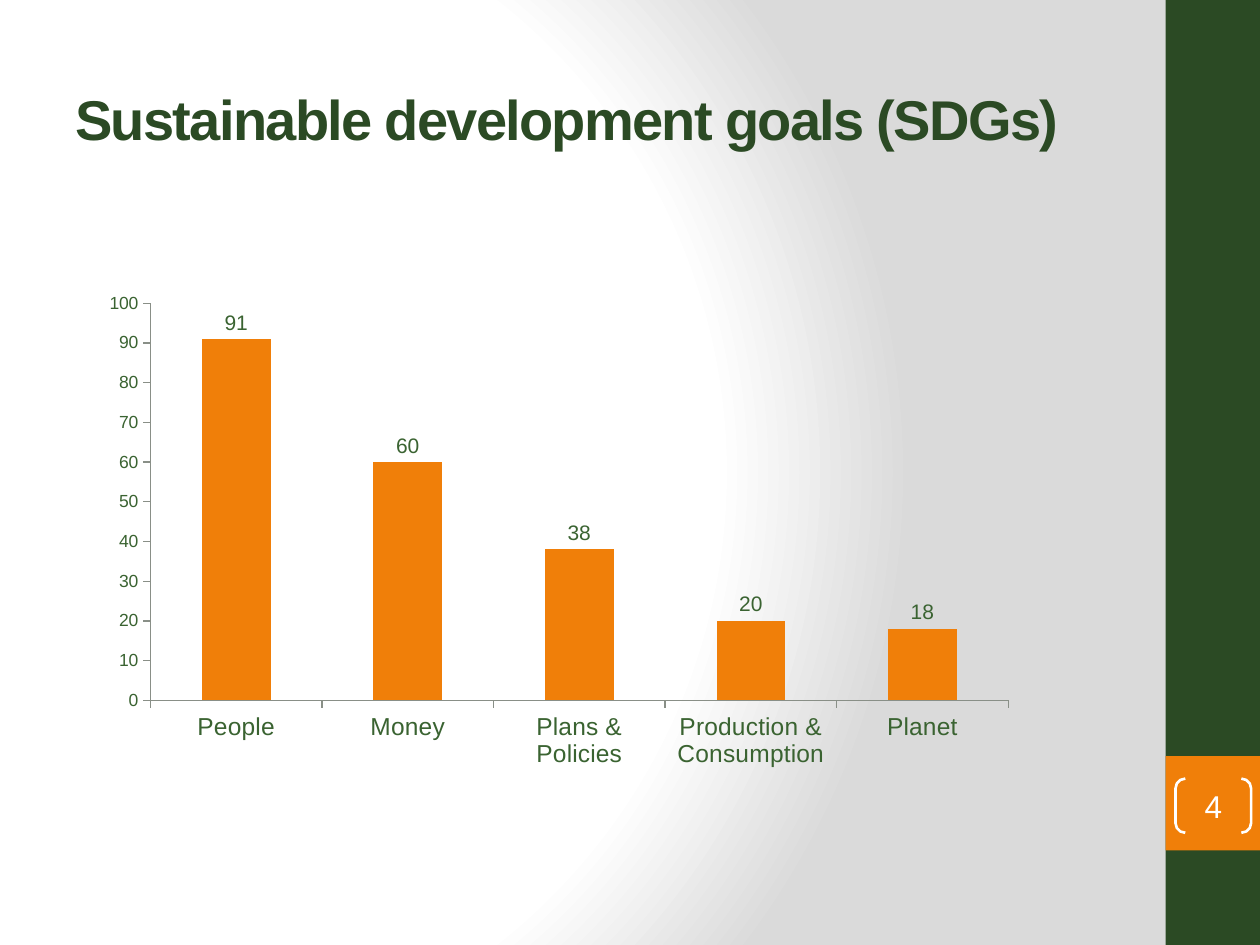
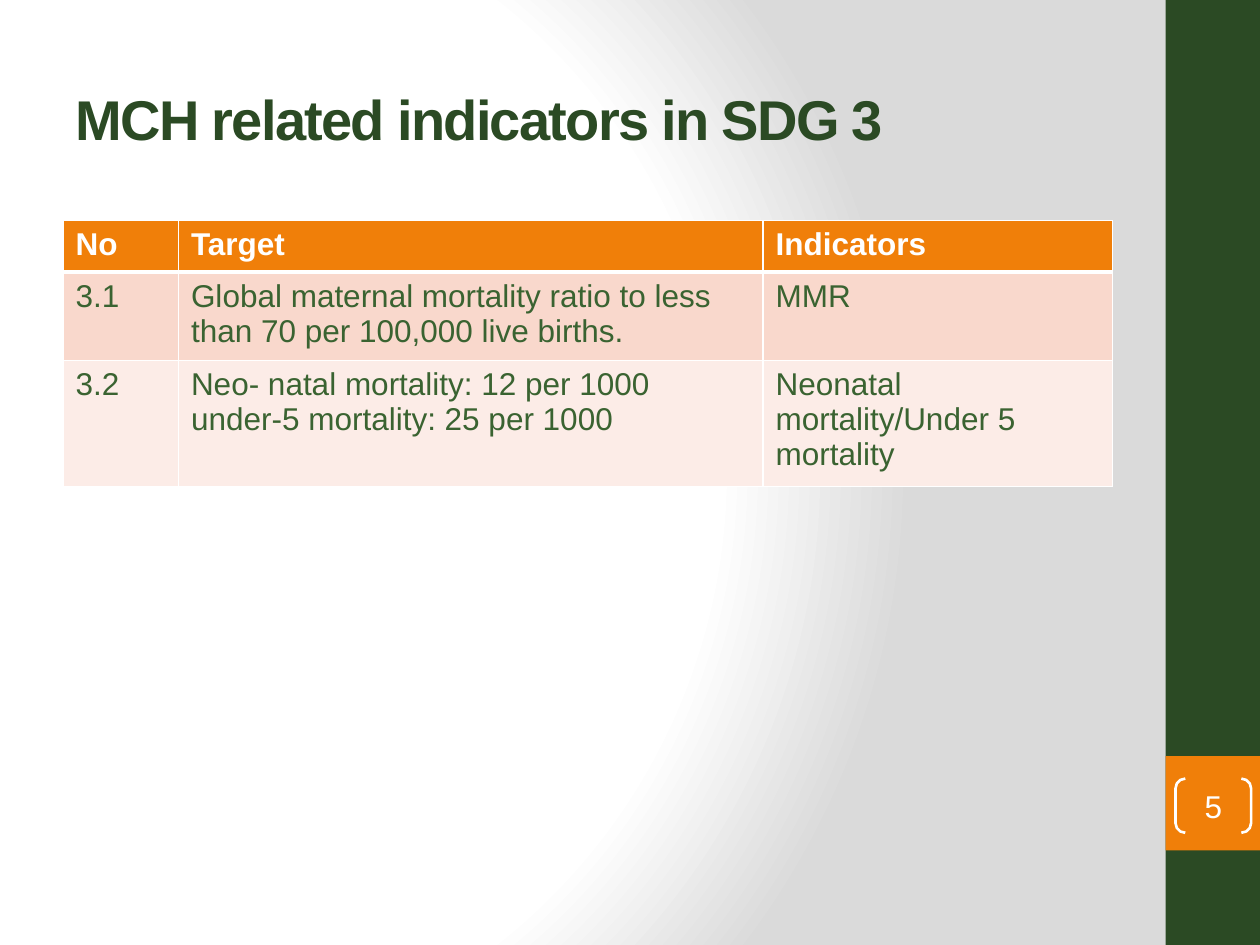
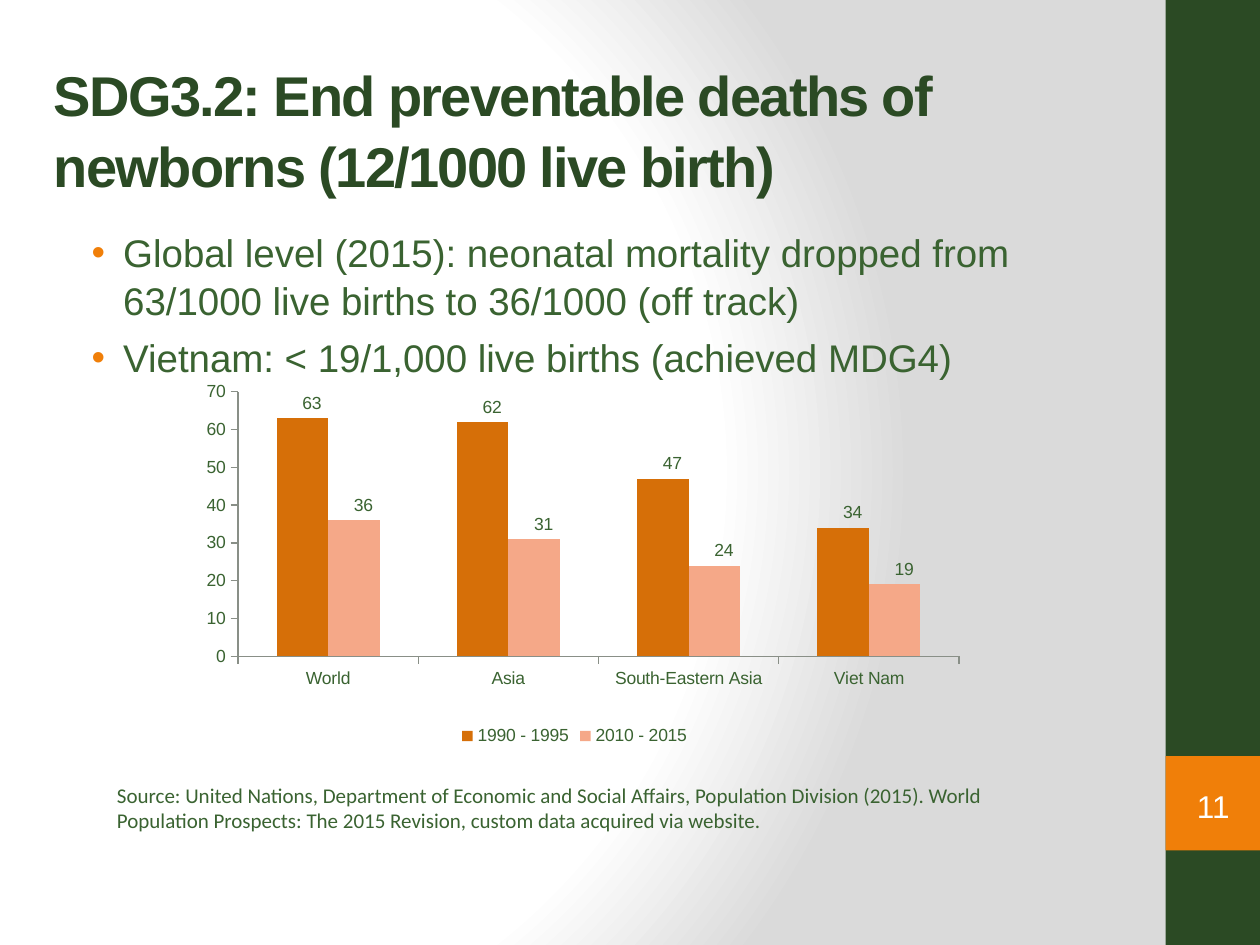
"""Build three slides on sustainable development goals and newborn mortality."""
from pptx import Presentation, util as u
from pptx.chart.data import CategoryChartData
from pptx.dml.color import RGBColor
from pptx.enum import chart as ch, shapes, text
from pptx.oxml import parse_xml
from pptx.oxml.ns import nsdecls

C = {"green": "2B4A24", "text": "3A6331", "orange": "F07F09", "white": "FFFFFF",
     "grey": "DADADA", "axis": "898F87", "row1": "F9D8CC", "row2": "FCECE7",
     "early": "D66F08", "late": "F5A888"}
W, H = 10, 7.5
BAND = 0.75
LEFT, BODY_W = 0.5, 8.33
TITLE_BOX = (LEFT, 0.3, BODY_W, 1.25)
SPACED = r"###\ ###\ ###\ ###\ ##0"

GOALS = {
    "title": "Sustainable development goals (SDGs)", "number": "4",
    "chart": {
        "box": (0.75, 2.25, 7.4, 3.94), "plot": (0.06, 0.04, 0.92, 0.8),
        "cats": ["People", "Money", "Plans & Policies", "Production & Consumption", "Planet"],
        "series": [("Series 1", [91, 60, 38, 20, 18], "orange")],
        "max": 100, "cat_size": 14, "label_size": 12, "format": "General", "legend": False}}

INDICATORS = {
    "title": "MCH related indicators in SDG 3", "number": "5",
    "shares": [0.11, 0.557, 0.333], "heights": [0.41, 0.66, 0.93],
    "rows": [
        (["No"], ["Target"], ["Indicators"]),
        (["3.1"], ["Global maternal mortality ratio to less than 70 per 100,000 live births."], ["MMR"]),
        (["3.2"], ["Neo- natal mortality: 12 per 1000", "under-5 mortality: 25 per 1000"],
         ["Neonatal mortality/Under 5 mortality"])]}

NEWBORNS = {
    "title": "SDG3.2: End preventable deaths of newborns (12/1000 live birth)", "number": "11",
    "bullets": [
        "Global level (2015): neonatal mortality dropped from 63/1000 live births to 36/1000 (off track)",
        "Vietnam: < 19/1,000 live births (achieved MDG4)"],
    "source": "Source: United Nations, Department of Economic and Social Affairs, Population Division "
              "(2015). World Population Prospects: The 2015 Revision, custom data acquired via website.",
    "chart": {
        "box": (1.38, 2.96, 6.36, 3), "plot": (0.08, 0.05, 0.9, 0.7),
        "cats": ["World", "Asia", "South-Eastern Asia", "Viet Nam"],
        "series": [("1990 - 1995", [63, 62, 47, 34], "early"),
                   ("2010 - 2015", [36, 31, 24, 19], "late")],
        "max": 70, "cat_size": 10, "label_size": 10, "format": SPACED, "legend": True}}


def rgb(name):
    return RGBColor.from_string(C[name])


def inches(box):
    return [u.Inches(v) for v in box]


def write(tf, lines, size, color, bold=False, font="Arial"):
    for i, line in enumerate(lines):
        p = tf.paragraphs[0] if i == 0 else tf.add_paragraph()
        r = p.add_run()
        r.text = line
        r.font.size, r.font.name, r.font.bold = u.Pt(size), font, bold
        r.font.color.rgb = rgb(color)


def add_text(s, box, lines, size, color, **style):
    tf = s.shapes.add_textbox(*inches(box)).text_frame
    tf.word_wrap = True
    write(tf, lines, size, color, **style)
    return tf


def add_shape(s, kind, box, fill=None):
    sp = s.shapes.add_shape(kind, *inches(box))
    sp.shadow.inherit = False
    sp.line.fill.background()
    if fill:
        sp.fill.solid()
        sp.fill.fore_color.rgb = rgb(fill)
    else:
        sp.fill.background()
    return sp


def set_background(prs):
    stops = "".join(f'<a:gs pos="{pos}000"><a:srgbClr val="{C[c]}"/></a:gs>'
                    for pos, c in [(0, "white"), (75, "white"), (100, "grey")])
    c_sld = prs.slide_master.element.cSld
    if c_sld.bg is not None:
        c_sld.remove(c_sld.bg)
    c_sld.insert(0, parse_xml(
        f'<p:bg {nsdecls("p", "a")}><p:bgPr><a:gradFill rotWithShape="1"><a:gsLst>{stops}</a:gsLst>'
        '<a:path path="circle"><a:fillToRect l="20000" t="50000" r="100000" b="50000"/></a:path>'
        '</a:gradFill><a:effectLst/></p:bgPr></p:bg>'))


def add_slide(prs, content, title_box=TITLE_BOX, bracketed=True):
    s = prs.slides.add_slide(prs.slide_layouts[6])
    rect = shapes.MSO_SHAPE.RECTANGLE
    add_shape(s, rect, (W - BAND, 0, BAND, H), "green")
    add_shape(s, rect, (W - BAND, 6, BAND, BAND), "orange")

    tf = add_text(s, title_box, [content["title"]], 32, "green", bold=True)
    tf.vertical_anchor = text.MSO_ANCHOR.MIDDLE
    p = tf.paragraphs[0]
    p.line_spacing = 1.05
    p.runs[0].font._element.set("spc", "-100")

    sp = add_shape(s, shapes.MSO_SHAPE.DOUBLE_BRACKET, (9.33, 6.18, 0.6, 0.43))
    sp.adjustments[0] = 0.18
    if bracketed:
        sp.line.color.rgb = rgb("white")
        sp.line.width = u.Pt(1.5)
    tf = sp.text_frame
    tf.margin_left = tf.margin_right = tf.margin_top = tf.margin_bottom = 0
    tf.vertical_anchor = text.MSO_ANCHOR.MIDDLE
    write(tf, [content["number"]], 18, "white")
    tf.paragraphs[0].alignment = text.PP_ALIGN.CENTER
    return s


def add_columns(s, spec):
    data = CategoryChartData()
    data.categories = spec["cats"]
    for name, values, _ in spec["series"]:
        data.add_series(name, values)
    chart = s.shapes.add_chart(ch.XL_CHART_TYPE.COLUMN_CLUSTERED, *inches(spec["box"]), data).chart
    chart.has_title = False
    chart.font.size, chart.font.name = u.Pt(10), "Arial"
    chart.font.color.rgb = rgb("text")
    chart.has_legend = spec["legend"]
    if chart.has_legend:
        chart.legend.position = ch.XL_LEGEND_POSITION.BOTTOM
        chart.legend.include_in_layout = False

    for axis in (chart.category_axis, chart.value_axis):
        axis.has_major_gridlines = False
        axis.major_tick_mark = ch.XL_TICK_MARK.OUTSIDE
        axis.format.line.color.rgb = rgb("axis")
    chart.category_axis.tick_labels.font.size = u.Pt(spec["cat_size"])
    value = chart.value_axis
    value.minimum_scale, value.maximum_scale, value.major_unit = 0, spec["max"], 10

    plot = chart.plots[0]
    plot.gap_width, plot.overlap, plot.vary_by_categories = 150, 0, False
    plot.has_data_labels = True
    labels = plot.data_labels
    labels.show_value = True
    labels.position = ch.XL_LABEL_POSITION.OUTSIDE_END
    labels.font.size = u.Pt(spec["label_size"])
    labels.font.color.rgb = rgb("text")
    for part in (labels, value.tick_labels):
        part.number_format, part.number_format_is_linked = spec["format"], False
    for series, (_, _, color) in zip(plot.series, spec["series"]):
        series.format.fill.solid()
        series.format.fill.fore_color.rgb = rgb(color)

    area = chart._chartSpace.chart.plotArea
    for old in area.findall("{*}layout"):
        area.remove(old)
    sizes = "".join(f'<c:{k} val="{v}"/>' for k, v in zip("xywh", spec["plot"]))
    area.insert(0, parse_xml(
        f'<c:layout {nsdecls("c")}><c:manualLayout><c:layoutTarget val="inner"/>'
        f'<c:xMode val="edge"/><c:yMode val="edge"/>{sizes}</c:manualLayout></c:layout>'))


def set_borders(cell, widths):
    for side, width in widths.items():
        cell._tc.get_or_add_tcPr().append(parse_xml(
            f'<a:ln{side} {nsdecls("a")} w="{u.Pt(width)}"><a:solidFill>'
            f'<a:srgbClr val="{C["white"]}"/></a:solidFill></a:ln{side}>'))


def add_indicator_table(s, content):
    rows, shares, heights = content["rows"], content["shares"], content["heights"]
    box = (LEFT, 1.75, BODY_W, sum(heights))
    table = s.shapes.add_table(len(rows), len(shares), *inches(box)).table
    table.horz_banding = False
    for column, share in zip(table.columns, shares):
        column.width = u.Inches(BODY_W * share)
    for i, (row, fill) in enumerate(zip(rows, ["orange", "row1", "row2"])):
        table.rows[i].height = u.Inches(heights[i])
        for j, lines in enumerate(row):
            cell = table.cell(i, j)
            set_borders(cell, {"L": 1, "R": 1, "T": 3 if i == 1 else 1, "B": 3 if i == 0 else 1})
            cell.fill.solid()
            cell.fill.fore_color.rgb = rgb(fill)
            write(cell.text_frame, lines, 18, "text" if i else "white", bold=i == 0)


def add_bullets(s, lines):
    tf = add_text(s, (LEFT, 1.75, BODY_W, 5.25), lines, 22, "text")
    for p in tf.paragraphs:
        p.space_before, p.line_spacing = u.Pt(4.4), 1.05
        props = p._p.get_or_add_pPr()
        props.set("marL", str(u.Inches(0.38)))
        props.set("indent", str(u.Inches(-0.25)))
        for tag in (f'buClr {nsdecls("a")}><a:srgbClr val="{C["orange"]}"/></a:buClr',
                    f'buFont {nsdecls("a")} typeface="Arial"/',
                    f'buChar {nsdecls("a")} char="•"/'):
            props.append(parse_xml(f"<a:{tag}>"))


def main():
    prs = Presentation()
    prs.slide_width, prs.slide_height = u.Inches(W), u.Inches(H)
    set_background(prs)

    add_columns(add_slide(prs, GOALS), GOALS["chart"])
    add_indicator_table(add_slide(prs, INDICATORS), INDICATORS)

    s = add_slide(prs, NEWBORNS, (0.33, 0.5, 8.98, 1.03), bracketed=False)
    add_bullets(s, NEWBORNS["bullets"])
    add_text(s, (0.83, 6.16, 7.72, 0.51), [NEWBORNS["source"]], 12, "text", font="Calibri")
    add_columns(s, NEWBORNS["chart"])
    prs.save("out.pptx")


if __name__ == "__main__":
    main()
